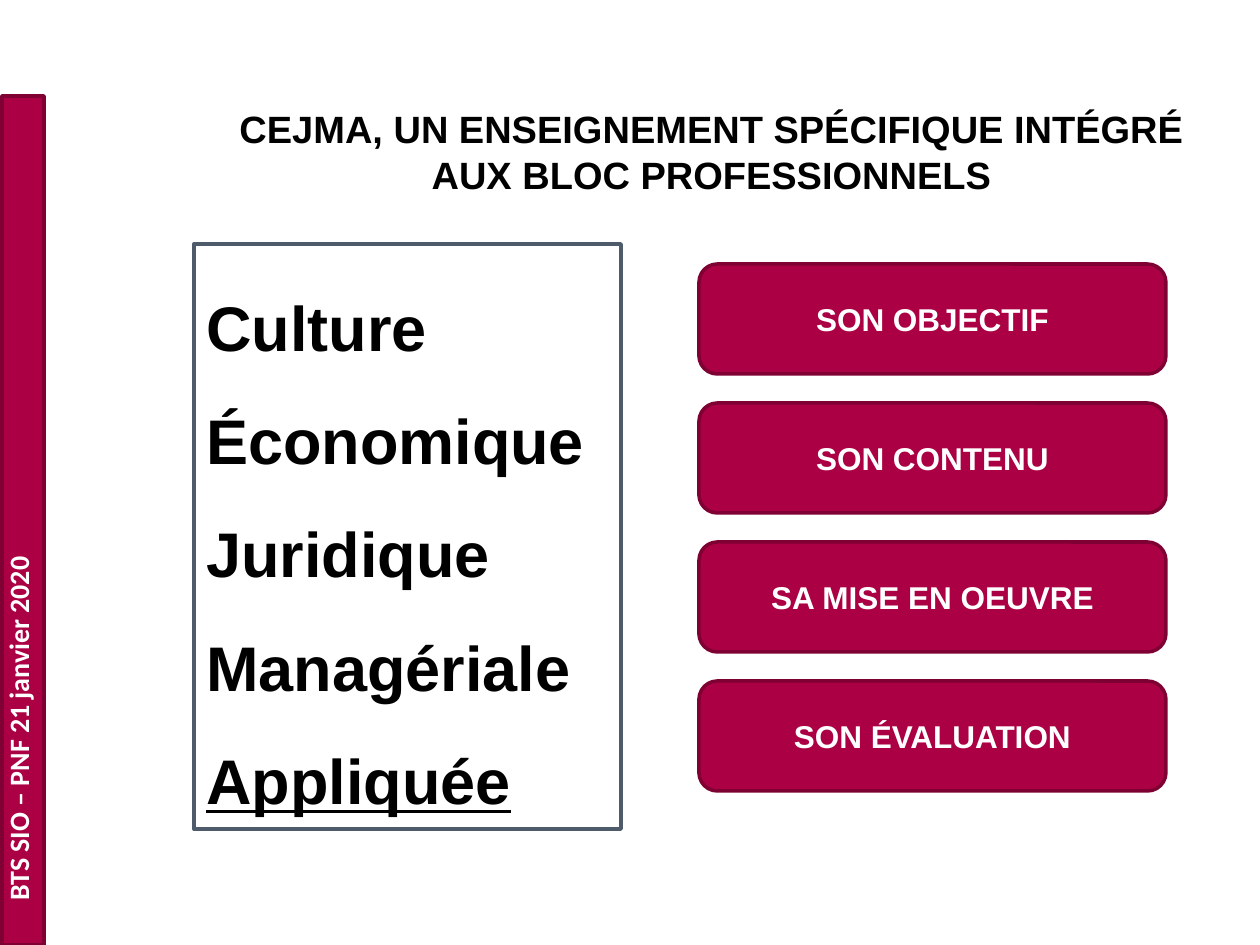
"""Build the slide presenting the CEJMA course and its four topics."""
from pptx import Presentation
from pptx.dml.color import RGBColor
from pptx.enum.shapes import MSO_SHAPE
from pptx.enum.text import MSO_ANCHOR, PP_ALIGN
from pptx.util import Pt

RECTANGLE, ROUNDED = MSO_SHAPE.RECTANGLE, MSO_SHAPE.ROUNDED_RECTANGLE
TOP, MIDDLE = MSO_ANCHOR.TOP, MSO_ANCHOR.MIDDLE
LEFT, CENTER = PP_ALIGN.LEFT, PP_ALIGN.CENTER

CRIMSON = RGBColor(0xAB, 0x00, 0x44)
BURGUNDY = RGBColor(0x7F, 0x00, 0x32)
SLATE = RGBColor(0x4D, 0x5B, 0x6B)
BLACK = RGBColor(0x00, 0x00, 0x00)
WHITE = RGBColor(0xFF, 0xFF, 0xFF)

TITLE = "CEJMA, UN ENSEIGNEMENT SPÉCIFIQUE INTÉGRÉ AUX BLOC PROFESSIONNELS"
EVENT = "BTS SIO – PNF 21 janvier 2020"
ACRONYM = ["Culture", "Économique", "Juridique", "Managériale", "Appliquée"]
UNDERLINED = "Appliquée"
TOPICS = ["SON OBJECTIF", "SON CONTENU", "SA MISE EN OEUVRE", "SON ÉVALUATION"]

TOPIC_LEFT, TOPIC_TOP, TOPIC_WIDTH, TOPIC_HEIGHT = 699, 264, 467, 110
TOPIC_PITCH = 139
EMU_PER_PX = 914400 / 126


def px(*lengths):
    return [round(length * EMU_PER_PX) for length in lengths]


def add_panel(slide, kind, box, fill, outline, weight):
    panel = slide.shapes.add_shape(kind, *px(*box))
    panel.shadow.inherit = False
    if fill is None:
        panel.fill.background()
    else:
        panel.fill.solid()
        panel.fill.fore_color.rgb = fill
    panel.line.color.rgb = outline
    panel.line.width = Pt(weight)
    return panel


def write(frame, lines, size, color, align=LEFT, anchor=TOP, font="Arial", spacing=None):
    frame.word_wrap = True
    frame.vertical_anchor = anchor
    for index, line in enumerate(lines):
        paragraph = frame.add_paragraph() if index else frame.paragraphs[0]
        paragraph.alignment = align
        paragraph.line_spacing = spacing
        run = paragraph.add_run()
        run.text = line
        run.font.name = font
        run.font.size = Pt(size)
        run.font.bold = True
        run.font.color.rgb = color
        if line == UNDERLINED:
            run.font.underline = True


def main():
    deck = Presentation()
    deck.slide_width, deck.slide_height = px(1260, 945)
    slide = deck.slides.add_slide(deck.slide_layouts[5])

    add_panel(slide, RECTANGLE, (2, 96, 42, 849), CRIMSON, BURGUNDY, 2)
    event = slide.shapes.add_textbox(*px(-5, 44, 59, 869)).text_frame
    write(event, [EVENT], 16, WHITE, font="Calibri")
    event._txBody.bodyPr.set("vert", "vert270")

    acronym = add_panel(slide, RECTANGLE, (194, 244, 427, 585), None, SLATE, 2.25)
    write(acronym.text_frame, ACRONYM, 36, BLACK, spacing=1.5)

    title = slide.shapes.title
    title.left, title.top, title.width, title.height = px(184, 106, 1055, 90)
    write(title.text_frame, [TITLE], 21.7, BLACK, CENTER, MIDDLE)

    for row, topic in enumerate(TOPICS):
        box = (TOPIC_LEFT, TOPIC_TOP + row * TOPIC_PITCH, TOPIC_WIDTH, TOPIC_HEIGHT)
        button = add_panel(slide, ROUNDED, box, CRIMSON, BURGUNDY, 2)
        write(button.text_frame, [topic], 18, WHITE, CENTER, MIDDLE)

    deck.save("out.pptx")


if __name__ == "__main__":
    main()
